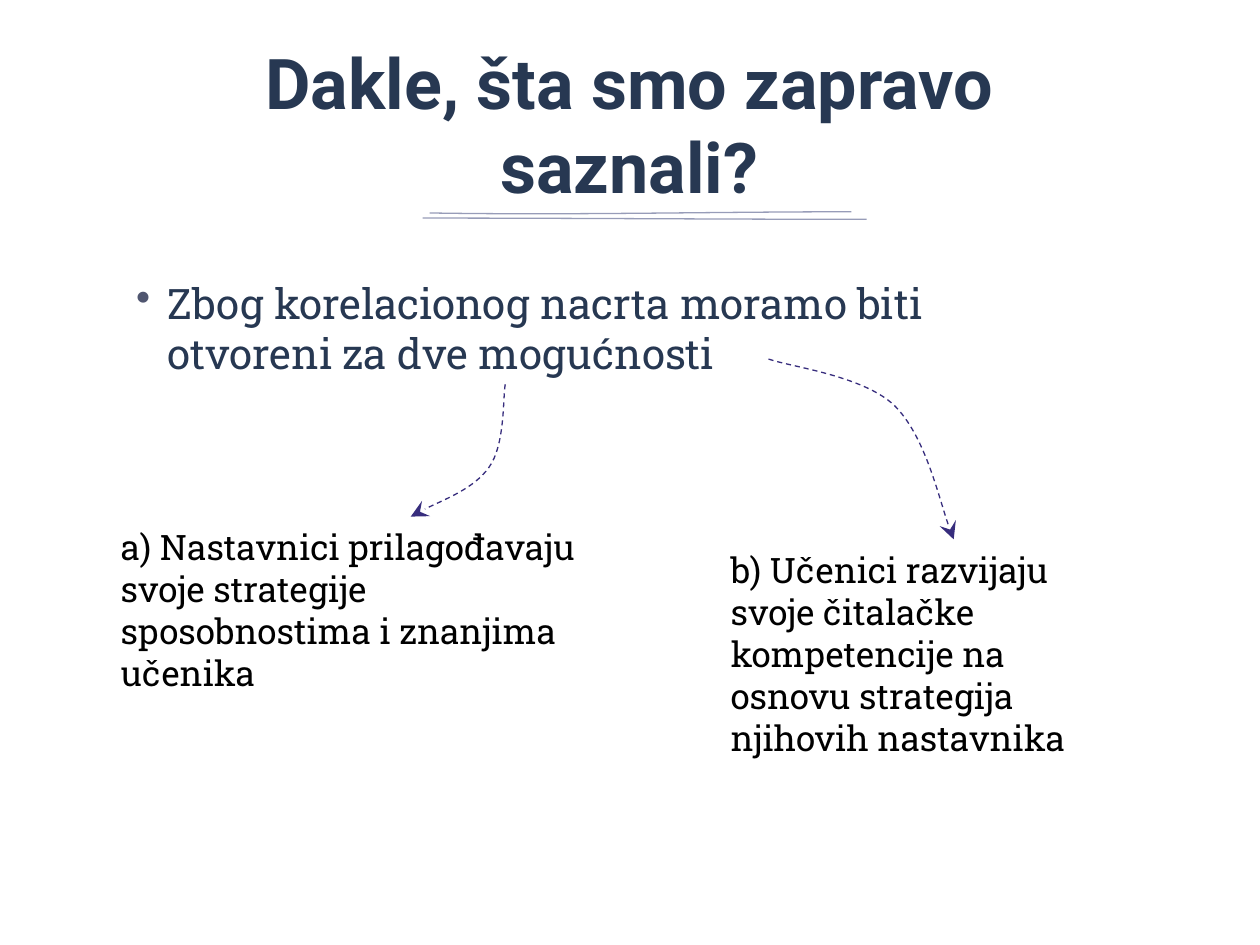
from dataclasses import dataclass

from lxml.etree import SubElement
from pptx import Presentation
from pptx.dml.color import RGBColor
from pptx.enum.dml import MSO_LINE
from pptx.enum.text import MSO_ANCHOR, PP_ALIGN
from pptx.oxml.ns import qn
from pptx.util import Pt


@dataclass(frozen=True)
class Theme:
    heading: str = "Roboto"
    body: str = "Roboto Slab"
    ink: str = "273852"
    bullet: str = "505670"
    black: str = "000000"
    rule: str = "979CB8"
    arrow: str = "372D7D"
    title_size: float = 40
    lead_size: float = 24
    note_size: float = 20
    line_width: float = 0.75


T = Theme()


def add_text(s, text, box, *, size, font=T.body, color=T.black, bold=False,
             align=PP_ALIGN.LEFT, anchor=MSO_ANCHOR.TOP, inset=(7.2, 3.6), bullet=None):
    tf = s.shapes.add_textbox(*map(Pt, box)).text_frame
    tf.word_wrap = True
    tf.vertical_anchor = anchor
    tf.margin_left = tf.margin_right = Pt(inset[0])
    tf.margin_top = tf.margin_bottom = Pt(inset[1])
    p = tf.paragraphs[0]
    p.alignment = align
    if bullet:
        pPr = p._p.get_or_add_pPr()
        pPr.set("marL", str(Pt(21)))
        pPr.set("indent", str(Pt(-18)))
        clr = SubElement(pPr, qn("a:buClr"))
        SubElement(clr, qn("a:srgbClr"), val=T.bullet)
        SubElement(pPr, qn("a:buChar"), char=bullet)
    r = p.add_run()
    r.text = text
    r.font.name = font
    r.font.size = Pt(size)
    r.font.bold = bold
    r.font.color.rgb = RGBColor.from_string(color)


def add_curve(s, origin, points, color):
    pts = [(Pt(origin[0] + x), Pt(origin[1] + y)) for x, y in points]
    builder = s.shapes.build_freeform(*pts[0], scale=1.0)
    builder.add_line_segments(pts[1:], close=False)
    sp = builder.convert_to_shape()
    sp.shadow.inherit = False
    sp.fill.background()
    sp.line.color.rgb = RGBColor.from_string(color)
    sp.line.width = Pt(T.line_width)
    path = sp._element.spPr.find(".//" + qn("a:path"))
    segments = path.findall(qn("a:lnTo"))
    for i in range(0, len(segments), 3):
        bezier = SubElement(path, qn("a:cubicBezTo"))
        for segment in segments[i:i + 3]:
            bezier.append(segment[0])
            path.remove(segment)
    return sp


def add_arrow(s, origin, points):
    sp = add_curve(s, origin, points, T.arrow)
    sp.line.dash_style = MSO_LINE.DASH
    ln = sp.line._get_or_add_ln()
    SubElement(ln, qn("a:tailEnd"), type="stealth", w="lg", len="lg")


def add_title(s, box, text):
    x, y, w, h = box
    rules = (
        [(165, 67.7), (245.5, 69), (325.5, 67), (406, 67)],
        [(161, 70.6), (245.5, 70.6), (330, 71.3), (414.7, 71.3)],
    )
    for rule in rules:
        add_curve(s, (x, y), rule, T.rule)
    add_text(s, text, box, size=T.title_size, font=T.heading, color=T.ink, bold=True,
             align=PP_ALIGN.CENTER, anchor=MSO_ANCHOR.BOTTOM, inset=(7.2, 7.2))


def add_lead(s, box, text):
    add_text(s, text, box, size=T.lead_size, color=T.ink, inset=(7.2, 7.2), bullet="•")


def add_option(s, box, text, curve):
    add_text(s, text, box, size=T.note_size)
    add_arrow(s, box[:2], curve)


def main():
    prs = Presentation()
    prs.slide_width, prs.slide_height = Pt(720), Pt(540)
    s = prs.slides.add_slide(prs.slide_layouts[6])
    add_title(s, (80.6, 54, 558, 72), "Dakle, šta smo zapravo saznali?")
    add_lead(s, (67.7, 151.2, 555.8, 85),
             "Zbog korelacionog nacrta moramo biti otvoreni za dve mogućnosti")
    add_option(s, (61.9, 296.6, 286.6, 104.4),
               "a) Nastavnici prilagođavaju svoje strategije sposobnostima i znanjima učenika",
               [(226.8, -77), (225.4, -69.1), (226.8, -42.4), (217.5, -29.5),
                (208.8, -17.3), (180.7, -6.4), (172.8, -1.4)])
    add_option(s, (410.4, 309.6, 230.4, 128.2),
               "b) Učenici razvijaju svoje čitalačke kompetencije na osnovu strategija "
               "njihovih nastavnika",
               [(28.8, -104.4), (41, -100), (82.8, -95), (100.8, -77.8),
                (118, -60.5), (128.9, -14.4), (134.6, -1.4)])
    prs.save("out.pptx")


if __name__ == "__main__":
    main()
